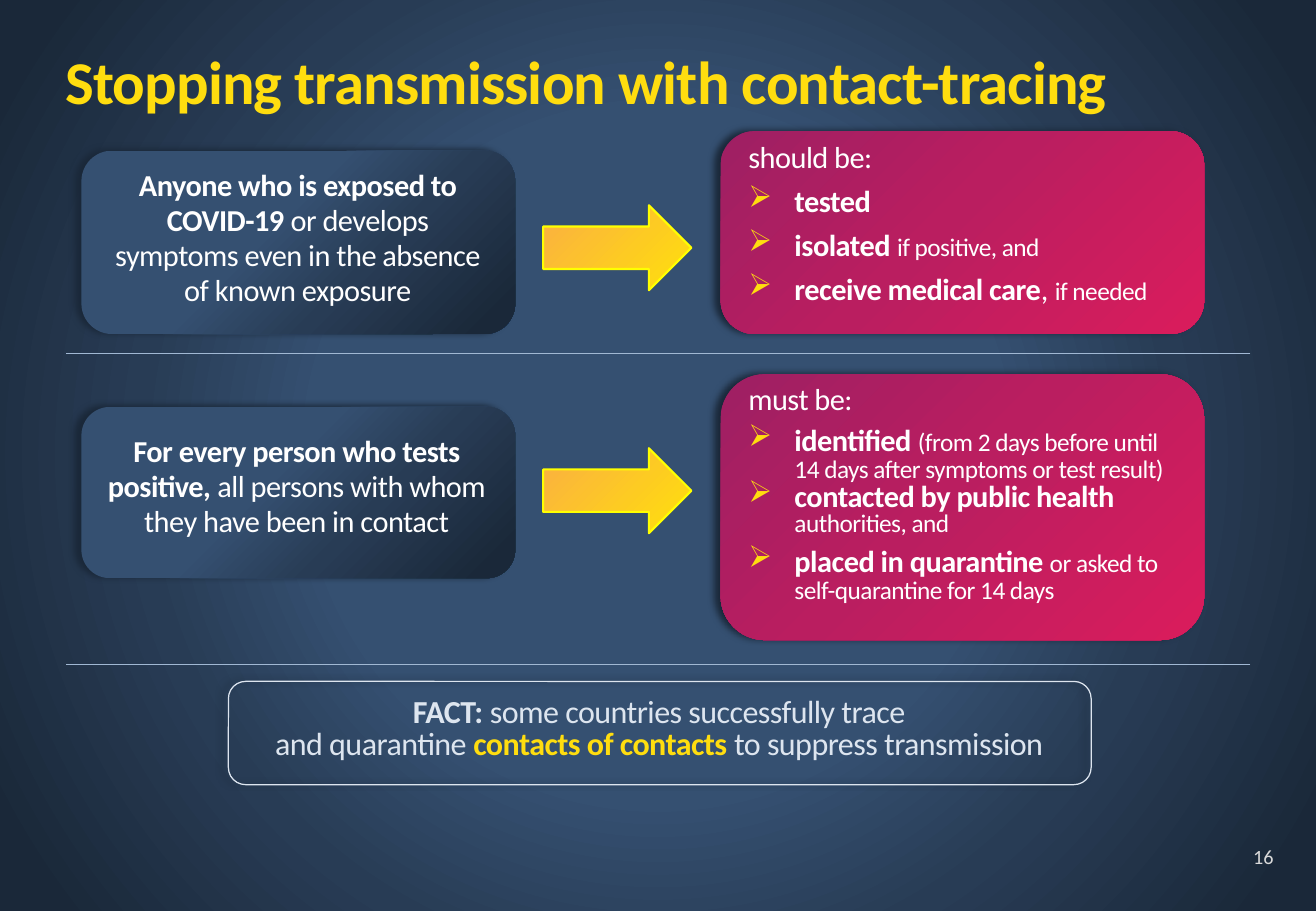
from lxml import etree
from pptx import Presentation
from pptx.dml.color import RGBColor
from pptx.enum.shapes import MSO_CONNECTOR as Connector, MSO_SHAPE as Shape
from pptx.enum.text import MSO_ANCHOR as Anchor, PP_ALIGN as Align
from pptx.oxml.ns import qn
from pptx.util import Inches, Pt

COLORS = {
    "white": "FFFFFF", "yellow": "FFDD0F", "pale": "DDE5EF", "gray": "D9D9D9",
    "rule": "A1B8D3", "arrow edge": "FFFF00", "shadow": "1A2839",
}
NAVY = [(0, "355071"), (43, "355071"), (65, "283C55"), (94, "1A2839")]
MAGENTA = [(0, "9E1F63"), (46, "BA1E60"), (100, "DA1C5C")]
AMBER = [(0, "FAAF42"), (94, "FFDD0F")]
WIDTH, HEIGHT = 10.83, 7.5


def rgb(name):
    return RGBColor.from_string(COLORS[name])


def add_xml(parent, tag, **attributes):
    return etree.SubElement(parent, qn("a:" + tag), attributes)


class Page:
    """The current slide and its style."""

    font = "Calibri"

    def __init__(self, deck):
        self.shapes = deck.slides.add_slide(deck.slide_layouts[6]).shapes

    def shape(self, kind, box, stops=None, edge=None, weight=0.75,
              radial=False, shadow=False):
        shape = self.shapes.add_shape(kind, *map(Inches, box))
        shape.fill.background()
        if edge:
            shape.line.color.rgb = rgb(edge)
            shape.line.width = Pt(weight)
        else:
            shape.line.fill.background()
        shape.shadow.inherit = False
        properties = shape._element.spPr
        if stops:
            self.gradient(properties, stops, radial)
        if shadow:
            effects = properties.find(qn("a:effectLst"))
            outer = add_xml(effects, "outerShdw", blurRad=str(Pt(4)), dist=str(Pt(4)),
                            dir=str(190 * 60000), algn="ctr", rotWithShape="0")
            add_xml(outer, "srgbClr", val=COLORS["shadow"])

    def gradient(self, properties, stops, radial):
        fill = etree.Element(qn("a:gradFill"), rotWithShape="1")
        stop_list = add_xml(fill, "gsLst")
        for position, color in stops:
            stop = add_xml(stop_list, "gs", pos=str(position * 1000))
            add_xml(stop, "srgbClr", val=color)
        if radial:
            center = add_xml(fill, "path", path="circle")
            add_xml(center, "fillToRect", l="50000", t="50000", r="50000", b="50000")
        else:
            add_xml(fill, "lin", ang=str(45 * 60000), scaled="0")
        properties.replace(properties.find(qn("a:noFill")), fill)

    def rule(self, y):
        line = self.shapes.add_connector(
            Connector.STRAIGHT, Inches(10.29), Inches(y), Inches(0.54), Inches(y))
        line.line.color.rgb = rgb("rule")
        line.line.width = Pt(0.75)
        add_xml(line._element.spPr, "effectLst")

    def text_box(self, box, anchor=Anchor.TOP):
        frame = self.shapes.add_textbox(*map(Inches, box)).text_frame
        frame.word_wrap = True
        frame.vertical_anchor = anchor
        return frame

    def para(self, frame, spans, size=18, color="white", align=Align.LEFT,
             leading=None, before=0, spacing=-0.3, bullet=False):
        """Each span is (text, bold, size, color); the last two are optional."""
        first = frame.paragraphs[0]
        para = frame.add_paragraph() if first.runs else first
        if bullet:
            properties = para._p.get_or_add_pPr()
            properties.set("marL", str(Inches(0.38)))
            properties.set("indent", str(-Inches(0.38)))
            add_xml(add_xml(properties, "buClr"), "srgbClr", val=COLORS["yellow"])
            add_xml(properties, "buChar", char="➢")
        para.alignment = align
        if leading:
            para.line_spacing = leading
        if before:
            para.space_before = Pt(before)
        para.font.name = self.font
        para.font.size = Pt(size)
        para.font.color.rgb = rgb(color)
        for text, bold, *extra in spans:
            for number, part in enumerate(text.split("\n")):
                if number:
                    para.add_line_break()
                span = para.add_run()
                span.text = part
                span.font.bold = bold
                if extra:
                    span.font.size = Pt(extra[0])
                if len(extra) > 1:
                    span.font.color.rgb = rgb(extra[1])
                span._r.get_or_add_rPr().set("spc", str(round(spacing * 100)))

    def premise(self, panel, box, spans):
        self.shape(Shape.ROUNDED_RECTANGLE, panel, NAVY, shadow=True)
        self.para(self.text_box(box), spans, align=Align.CENTER, leading=Pt(20.8))

    def actions(self, panel, box, heading, items):
        self.shape(Shape.ROUNDED_RECTANGLE, panel, MAGENTA, shadow=True)
        frame = self.text_box(box)
        self.para(frame, [(heading, False)], leading=0.8)
        for leading, before, spans in items:
            self.para(frame, spans, leading=leading, before=before, bullet=True)

    def arrow(self, y):
        self.shape(Shape.RIGHT_ARROW, (4.47, y, 1.22, 0.7), AMBER, "arrow edge", 1.25)


def main():
    deck = Presentation()
    deck.slide_width, deck.slide_height = Inches(WIDTH), Inches(HEIGHT)
    page = Page(deck)

    # Background, title and page number
    page.shape(Shape.RECTANGLE, (0, 0, WIDTH, HEIGHT), NAVY, radial=True)
    page.para(page.text_box((0.44, 0.38, 9.21, 0.8)),
              [("Stopping transmission with contact-tracing", True)],
              size=36, color="yellow", leading=0.9, spacing=-0.5)
    page.para(page.text_box((9.9, 6.92, 0.68, 0.27), Anchor.MIDDLE),
              [("16", False)], size=12, color="gray", align=Align.RIGHT, spacing=0)

    # Exposed people
    page.premise((0.67, 1.24, 3.57, 1.51), (0.81, 1.33, 3.28, 1.59), [
        ("Anyone who is exposed to COVID-19", True),
        (" or develops symptoms even in the absence of known exposure", False)])
    page.arrow(1.69)
    page.actions((5.93, 1.08, 3.98, 1.67), (6.06, 1.15, 3.81, 1.44), "should be:", [
        (0.8, 8.8, [("tested", True)]),
        (0.8, 8.8, [("isolated ", True), ("if positive, and", False, 15)]),
        (0.8, 8.8, [("receive medical care", True), (", ", False),
                    ("if needed", False, 15)])])

    # Contacts of people who test positive
    page.premise((0.67, 3.35, 3.57, 1.41), (0.78, 3.52, 3.32, 1.09), [
        ("For every person who tests positive,", True),
        (" all persons with whom they have been in contact", False)])
    page.arrow(3.69)
    page.actions((5.93, 3.08, 3.98, 2.19), (6.06, 3.14, 3.81, 2.25), "must be:", [
        (Pt(15.6), 8.8, [
            ("identified ", True),
            ("(from 2 days before until\n14 days after symptoms or test result)",
             False, 15)]),
        (0.8, 0, [("contacted by public health ", True),
                  ("authorities, and", False, 15)]),
        (Pt(15.6), 8.8, [("placed in quarantine ", True),
                         ("or asked to self-quarantine for 14 days", False, 15)])])

    # Dividing rules
    for y in (2.91, 5.47):
        page.rule(y)

    # Fact
    page.shape(Shape.ROUNDED_RECTANGLE, (1.88, 5.61, 7.1, 0.85), edge="pale", shadow=True)
    fact = page.text_box((1.97, 5.7, 6.91, 0.72))
    for spans in (
        [("FACT: ", True), ("some countries successfully trace", False)],
        [("and quarantine ", False), ("contacts of contacts", True, 19, "yellow"),
         (" to suppress transmission", False)],
    ):
        page.para(fact, spans, size=19, color="pale", align=Align.CENTER, leading=Pt(18.8))

    deck.save("out.pptx")


if __name__ == "__main__":
    main()
